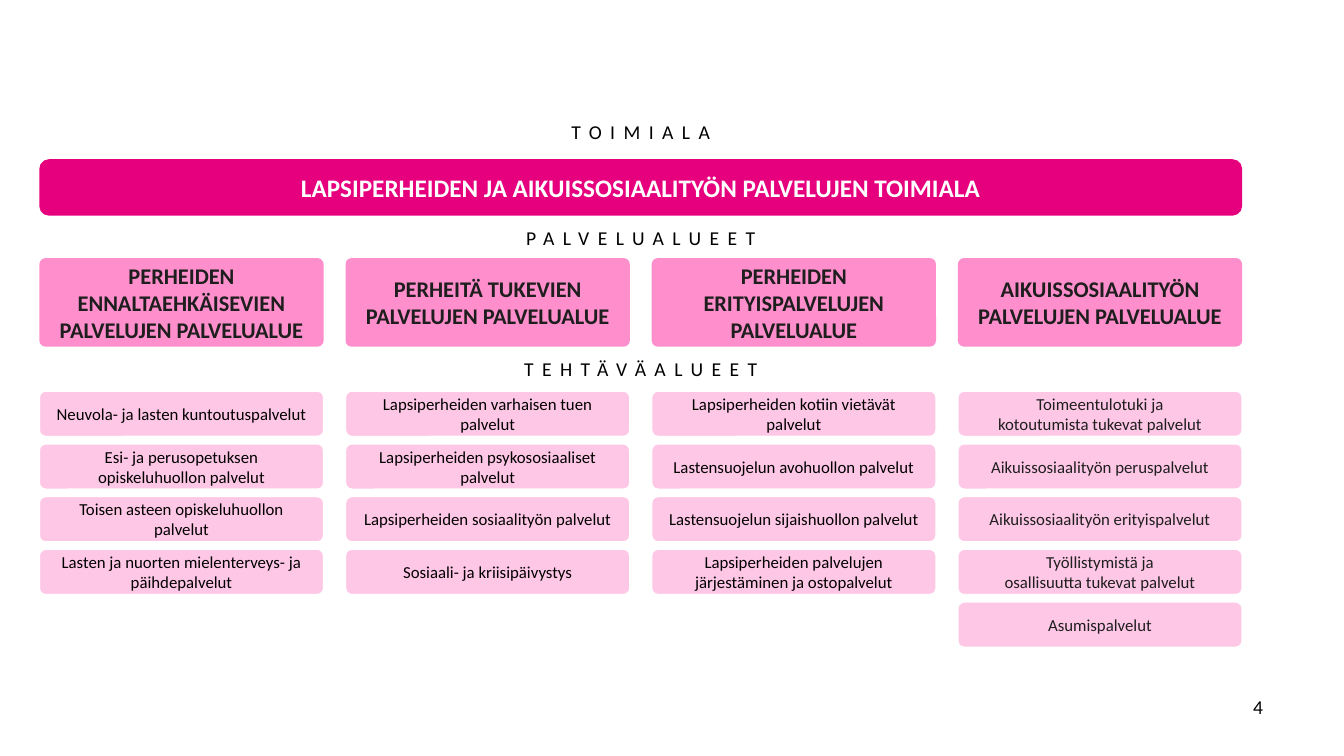
from pptx import Presentation
from pptx.dml.color import RGBColor
from pptx.enum.shapes import MSO_SHAPE as Shape
from pptx.enum.text import MSO_ANCHOR as Anchor, PP_ALIGN as Align
from pptx.util import Inches, Pt

LEFT, FULL_WIDTH = 0.39, 11.93
COLUMN_WIDTH = 2.82
COLUMN_PITCH = (FULL_WIDTH - COLUMN_WIDTH) / 3
AREA_TOP, AREA_HEIGHT = 2.56, 0.88
TASK_TOP, TASK_HEIGHT, TASK_PITCH = 3.88, 0.45, 0.523
MAGENTA, PINK, PALE_PINK = "E6007E", "FF8FCC", "FFC7E6"
BLACK, DARK, WHITE = "000000", "1E1E1E", "FFFFFF"

LEVELS = [("TOIMIALA", 1.14), ("PALVELUALUEET", 2.19), ("TEHTÄVÄALUEET", 3.49)]

SERVICE_AREAS = [
    ("PERHEIDEN ENNALTAEHKÄISEVIEN PALVELUJEN PALVELUALUE", BLACK, [
        "Neuvola- ja lasten kuntoutuspalvelut",
        "Esi- ja perusopetuksen opiskeluhuollon palvelut",
        "Toisen asteen opiskeluhuollon palvelut",
        "Lasten ja nuorten mielenterveys- ja päihdepalvelut",
    ]),
    ("PERHEITÄ TUKEVIEN PALVELUJEN PALVELUALUE", BLACK, [
        "Lapsiperheiden varhaisen tuen palvelut",
        "Lapsiperheiden psykososiaaliset palvelut",
        "Lapsiperheiden sosiaalityön palvelut",
        "Sosiaali- ja kriisipäivystys",
    ]),
    ("PERHEIDEN ERITYISPALVELUJEN PALVELUALUE", BLACK, [
        "Lapsiperheiden kotiin vietävät palvelut",
        "Lastensuojelun avohuollon palvelut",
        "Lastensuojelun sijaishuollon palvelut",
        "Lapsiperheiden palvelujen\njärjestäminen ja ostopalvelut",
    ]),
    ("AIKUISSOSIAALITYÖN PALVELUJEN PALVELUALUE", DARK, [
        "Toimeentulotuki ja\nkotoutumista tukevat palvelut",
        "Aikuissosiaalityön peruspalvelut",
        "Aikuissosiaalityön erityispalvelut",
        "Työllistymistä ja\nosallisuutta tukevat palvelut",
        "Asumispalvelut",
    ]),
]


def rgb(value):
    return RGBColor.from_string(value)


def write_text(frame, text, size=14, color=BLACK, bold=False,
               align=Align.CENTER, anchor=Anchor.TOP, spacing=0, font="Calibri"):
    frame.word_wrap = True
    frame.vertical_anchor = anchor
    paragraph = frame.paragraphs[0]
    paragraph.text = text
    paragraph.alignment = align
    for run in paragraph.runs:
        run.font.name = font
        run.font.size = Pt(size)
        run.font.bold = bold
        run.font.color.rgb = rgb(color)
        if spacing:
            run._r.get_or_add_rPr().set("spc", str(spacing * 100))


class OrganisationSlide:
    def __init__(self, presentation):
        self.slide = presentation.slides.add_slide(presentation.slide_layouts[6])

    def label(self, text, left, top, width, height, **text_format):
        box = self.slide.shapes.add_textbox(
            Inches(left), Inches(top), Inches(width), Inches(height))
        write_text(box.text_frame, text, **text_format)

    def box(self, text, left, top, width, height, fill, corner, line=None, **text_format):
        shape = self.slide.shapes.add_shape(
            Shape.ROUNDED_RECTANGLE,
            Inches(left), Inches(top), Inches(width), Inches(height))
        shape.shadow.inherit = False
        shape.adjustments[0] = corner
        shape.fill.solid()
        shape.fill.fore_color.rgb = rgb(fill)
        if line:
            shape.line.color.rgb = rgb(line)
            shape.line.width = Pt(1)
        else:
            shape.line.fill.background()
        write_text(shape.text_frame, text, anchor=Anchor.MIDDLE, **text_format)


def main():
    presentation = Presentation()
    presentation.slide_width = Inches(13.33)
    presentation.slide_height = Inches(7.5)
    chart = OrganisationSlide(presentation)

    chart.box("LAPSIPERHEIDEN JA AIKUISSOSIAALITYÖN PALVELUJEN TOIMIALA",
              LEFT, 1.58, FULL_WIDTH, 0.56, MAGENTA, 0.17,
              size=18, color=WHITE, bold=True)
    for name, top in LEVELS:
        chart.label(name, LEFT, top, FULL_WIDTH, 0.34, spacing=6)

    for column, (area, task_color, tasks) in enumerate(SERVICE_AREAS):
        left = LEFT + column * COLUMN_PITCH
        chart.box(area, left, AREA_TOP, COLUMN_WIDTH, AREA_HEIGHT, PINK, 0.07,
                  size=16, color=DARK, bold=True)
        for row, task in enumerate(tasks):
            chart.box(task, left, TASK_TOP + row * TASK_PITCH, COLUMN_WIDTH, TASK_HEIGHT,
                      PALE_PINK, 0.14, line=WHITE, size=12, color=task_color)

    chart.label("4", 12.33, 6.84, 0.66, 0.4, align=Align.LEFT)
    presentation.save("out.pptx")


if __name__ == "__main__":
    main()
